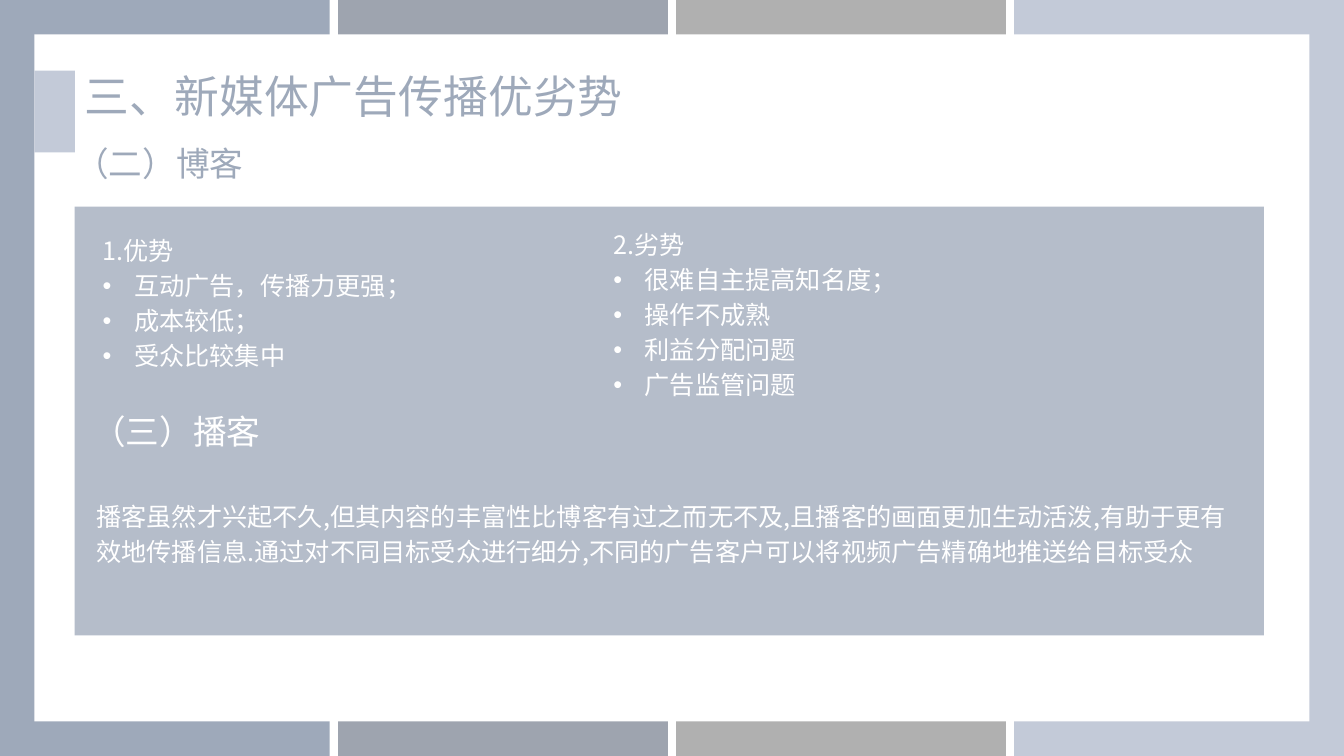
from dataclasses import dataclass

from lxml import etree
from pptx import Presentation
from pptx.dml.color import RGBColor
from pptx.enum.shapes import MSO_SHAPE as SHAPE
from pptx.enum.text import MSO_AUTO_SIZE as AUTO
from pptx.oxml.ns import qn
from pptx.util import Cm, Pt


@dataclass(frozen=True)
class Theme:
    font: str = "Noto Sans CJK SC"
    blue: str = "9EA9BA"
    slate: str = "9EA4AF"
    grey: str = "B0B0B0"
    pale: str = "C3CAD8"
    white: str = "FFFFFF"
    title: int = 32
    subtitle: int = 24
    body: int = 18
    leading: int = 25
    panel_alpha: int = 76


T = Theme()
WIDTH, HEIGHT = 33.87, 19.05

ADVANTAGES = ["1.优势", "互动广告，传播力更强；", "成本较低；", "受众比较集中"]
DRAWBACKS = ["2.劣势", "很难自主提高知名度；", "操作不成熟", "利益分配问题", "广告监管问题"]
PODCAST = (
    "播客虽然才兴起不久,但其内容的丰富性比博客有过之而无不及,"
    "且播客的画面更加生动活泼,有助于更有效地传播信息."
    "通过对不同目标受众进行细分,不同的广告客户可以将视频广告精确地推送给目标受众"
)


def add_rect(s, x, y, w, h, color, alpha=None):
    sp = s.shapes.add_shape(SHAPE.RECTANGLE, Cm(x), Cm(y), Cm(w), Cm(h))
    sp.shadow.inherit = False
    sp.fill.solid()
    sp.fill.fore_color.rgb = RGBColor.from_string(color)
    sp.line.fill.background()
    if alpha is not None:
        clr = sp._element.spPr.find(qn("a:solidFill"))[0]
        etree.SubElement(clr, qn("a:alpha"), val=str(alpha * 1000))


def add_bullet(p):
    pPr = p._p.get_or_add_pPr()
    pPr.set("marL", str(Cm(0.79)))
    pPr.set("indent", str(-Cm(0.79)))
    etree.SubElement(pPr, qn("a:buFont"), typeface="Arial")
    etree.SubElement(pPr, qn("a:buChar"), char="•")


def add_text(s, x, y, w, h, lines, size, color, leading=None):
    tf = s.shapes.add_textbox(Cm(x), Cm(y), Cm(w), Cm(h)).text_frame
    tf.word_wrap = True
    tf.auto_size = AUTO.SHAPE_TO_FIT_TEXT
    tf.text = "\n".join(lines)
    for i, p in enumerate(tf.paragraphs):
        if i:
            add_bullet(p)
        if leading:
            p.line_spacing = Pt(leading)
        for r in p.runs:
            r.font.size = Pt(size)
            r.font.name = T.font
            r.font.color.rgb = RGBColor.from_string(color)
            etree.SubElement(r._r.get_or_add_rPr(), qn("a:ea"), typeface=T.font)


def add_frame(s, x, y, w, h):
    colors = [T.blue, T.slate, T.grey, T.pale]
    gap, border = 0.21, 0.87
    stripe = (w - gap * (len(colors) - 1)) / len(colors)
    for i, color in enumerate(colors):
        add_rect(s, x + i * (stripe + gap), y, stripe, h, color)
    add_rect(s, x + border, y + border, w - 2 * border, h - 2 * border, T.white)


def add_heading(s, x, y, w, h):
    tab = 1.02
    add_rect(s, x, y, tab, h, T.pale)
    add_text(s, x + tab, y - 0.18, w - tab, 1.63,
             ["三、新媒体广告传播优劣势"], T.title, T.blue)
    add_text(s, x + 0.78, y + 1.7, 11.66, 1.27, ["（二）博客"], T.subtitle, T.blue)


def add_panel(s, x, y, w, h):
    add_rect(s, x, y, w, h, T.blue, T.panel_alpha)
    for dx, dy, lines in [(0.46, 0.48, ADVANTAGES), (13.33, 0.33, DRAWBACKS)]:
        add_text(s, x + dx, y + dy, 9.53, 4.7, lines, T.body, T.white, T.leading)
    add_text(s, x + 0.2, y + 5.03, 11.66, 1.27, ["（三）播客"], T.subtitle, T.white)
    add_text(s, x + 0.3, y + 7.19, w - 0.73, 2.9, [PODCAST],
             T.body, T.white, T.leading)


def main():
    prs = Presentation()
    prs.slide_width, prs.slide_height = Cm(WIDTH), Cm(HEIGHT)
    s = prs.slides.add_slide(prs.slide_layouts[6])
    add_frame(s, 0, 0, WIDTH, HEIGHT)
    add_heading(s, 0.87, 1.78, 15.85, 2.06)
    add_panel(s, 1.88, 5.21, 29.97, 10.8)
    prs.save("out.pptx")


if __name__ == "__main__":
    main()
